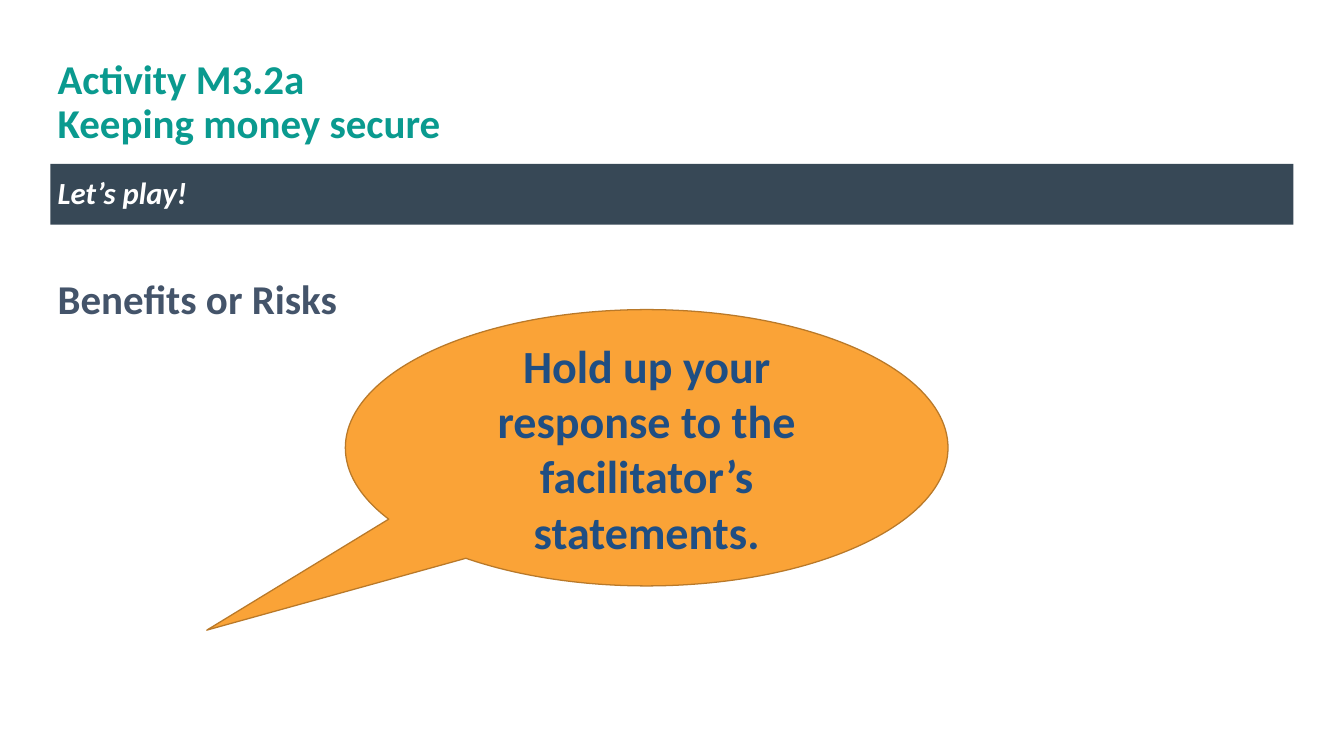
from dataclasses import dataclass
from typing import Optional

from pptx import Presentation
from pptx.dml.color import RGBColor
from pptx.enum.shapes import MSO_SHAPE
from pptx.enum.text import MSO_ANCHOR, MSO_AUTO_SIZE, PP_ALIGN
from pptx.util import Cm, Pt

RECT = MSO_SHAPE.RECTANGLE
CALLOUT = MSO_SHAPE.OVAL_CALLOUT
TOP, MIDDLE = MSO_ANCHOR.TOP, MSO_ANCHOR.MIDDLE
LEFT, CENTER, JUSTIFY = PP_ALIGN.LEFT, PP_ALIGN.CENTER, PP_ALIGN.JUSTIFY
NO_FIT = MSO_AUTO_SIZE.NONE
TITLE_ONLY = 5
MARGIN, CONTENT_W = 1.39, 34.26


@dataclass
class Block:
    text: str
    left: float
    top: float
    width: float
    height: float
    size: int
    color: str
    align: PP_ALIGN = LEFT
    anchor: MSO_ANCHOR = MIDDLE
    inset: float = 0.2
    spacing: float = 1.0
    italic: bool = False
    shape: Optional[MSO_SHAPE] = None
    fill: str = ""
    line: str = ""
    tail: tuple[float, ...] = ()


TITLE = Block("Activity M3.2a\vKeeping money secure", MARGIN, 1.19, CONTENT_W, 3.33,
              32, "0A9A8F", spacing=0.9)
BLOCKS = [
    Block("Benefits or Risks", MARGIN, 7.41, CONTENT_W, 12.34,
          32, "44546A", align=JUSTIFY, anchor=TOP),
    Block("Let’s play!", MARGIN, 4.52, CONTENT_W, 1.68,
          24, "FFFFFF", align=JUSTIFY, spacing=0.9, italic=True,
          shape=RECT, fill="374856"),
    Block("Hold up your response to the facilitator’s statements.",
          9.52, 8.54, 16.61, 7.62, 36, "1F4E83", align=CENTER, inset=0.25,
          shape=CALLOUT, fill="FAA337", line="B97929", tail=(-0.73, 0.66)),
]


def rgb(value: str) -> RGBColor:
    return RGBColor.from_string(value)


def write(sp, block: Block) -> None:
    tf = sp.text_frame
    tf.text = block.text
    tf.word_wrap = True
    tf.auto_size = NO_FIT
    tf.vertical_anchor = block.anchor
    tf.margin_left = tf.margin_right = Cm(block.inset)
    tf.margin_top = tf.margin_bottom = Cm(0.13)
    p = tf.paragraphs[0]
    p.alignment = block.align
    p.line_spacing = block.spacing
    p.font.name = "Calibri"
    p.font.size = Pt(block.size)
    p.font.bold = True
    p.font.italic = block.italic
    p.font.color.rgb = rgb(block.color)


def draw(s, block: Block) -> None:
    box = [Cm(v) for v in (block.left, block.top, block.width, block.height)]
    if block.shape is None:
        sp = s.shapes.add_textbox(*box)
    else:
        sp = s.shapes.add_shape(block.shape, *box)
        sp.shadow.inherit = False
        sp.fill.solid()
        sp.fill.fore_color.rgb = rgb(block.fill)
        if block.line:
            sp.line.color.rgb = rgb(block.line)
            sp.line.width = Pt(1)
        else:
            sp.line.fill.background()
        for i, offset in enumerate(block.tail):
            sp.adjustments[i] = offset
    write(sp, block)


def main() -> None:
    prs = Presentation()
    prs.slide_width, prs.slide_height = Pt(1050), Pt(591)
    s = prs.slides.add_slide(prs.slide_layouts[TITLE_ONLY])
    title = s.shapes.title
    title.left, title.top = Cm(TITLE.left), Cm(TITLE.top)
    title.width, title.height = Cm(TITLE.width), Cm(TITLE.height)
    write(title, TITLE)
    for block in BLOCKS:
        draw(s, block)
    prs.save("out.pptx")


if __name__ == "__main__":
    main()
